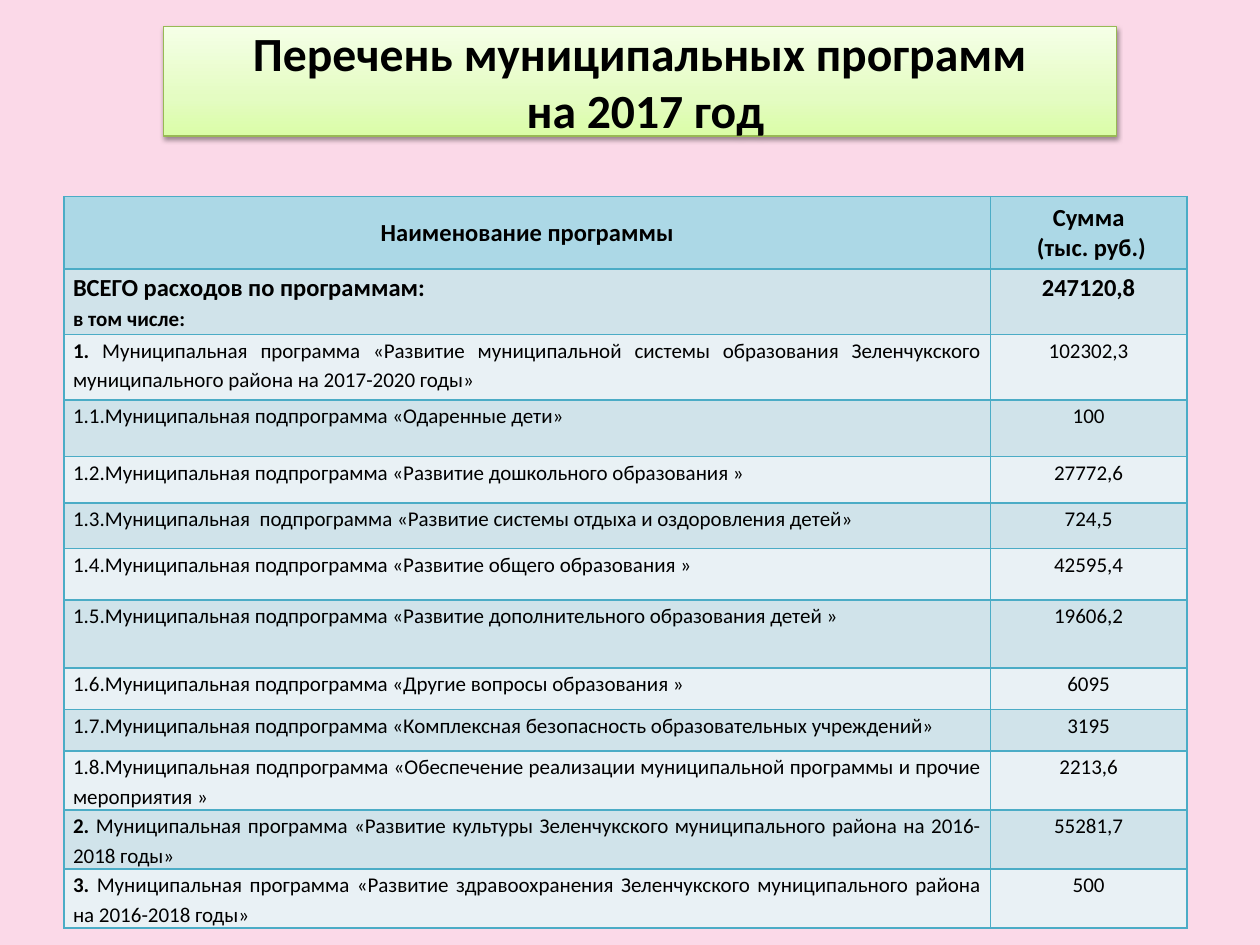
from lxml import etree
from pptx import Presentation
from pptx.dml.color import RGBColor
from pptx.enum.shapes import MSO_SHAPE
from pptx.enum.text import MSO_ANCHOR, PP_ALIGN
from pptx.oxml.ns import qn
from pptx.util import Inches, Pt

CENTER, JUSTIFY = PP_ALIGN.CENTER, PP_ALIGN.JUSTIFY
MIDDLE, TOP = MSO_ANCHOR.MIDDLE, MSO_ANCHOR.TOP
RECTANGLE = MSO_SHAPE.RECTANGLE

# Content: a paragraph is a list of (text, size, bold) runs
TITLE = ["Перечень муниципальных программ", " на 2017 год"]
HEADERS = [["Наименование программы"], ["Сумма", " (тыс. руб.)"]]
TOTAL = ([("ВСЕГО расходов по программам:", 14), ("в том числе:", 12)], "247120,8")
# Bold number, name, amount, row height
PROGRAMS = [
    ("1.", " Муниципальная программа «Развитие муниципальной системы образования "
     "Зеленчукского муниципального района на 2017-2020 годы»", "102302,3", 0.52),
    ("", "1.1.Муниципальная подпрограмма «Одаренные дети» ", "100", 0.45),
    ("", "1.2.Муниципальная подпрограмма «Развитие дошкольного образования »",
     "27772,6", 0.37),
    ("", "1.3.Муниципальная  подпрограмма «Развитие системы отдыха и оздоровления "
     "детей»", "724,5", 0.36),
    ("", "1.4.Муниципальная подпрограмма «Развитие общего образования »",
     "42595,4", 0.41),
    ("", "1.5.Муниципальная подпрограмма «Развитие дополнительного образования "
     "детей »", "19606,2", 0.54),
    ("", "1.6.Муниципальная подпрограмма «Другие вопросы образования »", "6095", 0.33),
    ("", "1.7.Муниципальная подпрограмма «Комплексная безопасность образовательных "
     "учреждений»", "3195", 0.33),
    ("", "1.8.Муниципальная подпрограмма «Обеспечение реализации муниципальной "
     "программы и прочие мероприятия »", "2213,6", 0.44),
    ("2. ", "Муниципальная программа «Развитие культуры Зеленчукского "
     "муниципального района на 2016-2018 годы»", "55281,7", 0.43),
    ("3. ", "Муниципальная программа «Развитие здравоохранения Зеленчукского "
     "муниципального района на 2016-2018 годы»", "500", 0.43),
]
COLUMN_WIDTHS = [7.35, 1.56]
HEADER_HEIGHT, TOTAL_HEIGHT = 0.54, 0.52
HEADER_FILL, BAND_FILLS = "ACD8E6", ["D0E3EA", "E9F1F5"]
GRID_COLOR = "4BACC6"
TITLE_GRADIENT = [(0, "DAFDA7"), (35, "E4FCC2"), (100, "F5FFE7")]


def rgb(value):
    return RGBColor.from_string(value)


def add_color(parent, value):
    return etree.SubElement(parent, qn("a:srgbClr"), val=value)


def write_text(frame, paragraphs, align=CENTER, spacing=None):
    for i, runs in enumerate(paragraphs):
        paragraph = frame.paragraphs[0] if i == 0 else frame.add_paragraph()
        paragraph.alignment = align
        if spacing:
            paragraph.line_spacing = spacing
        for text, size, bold in runs:
            run = paragraph.add_run()
            run.text = text
            run.font.name = "Calibri"
            run.font.size = Pt(size)
            run.font.bold = bold
            run.font.color.rgb = rgb("000000")


def style_cell(cell, fill, anchor=TOP, insets=(0.07, 0)):
    cell.fill.solid()
    cell.fill.fore_color.rgb = rgb(fill)
    cell.vertical_anchor = anchor
    cell.margin_left = cell.margin_right = Inches(insets[0])
    cell.margin_top = cell.margin_bottom = Inches(insets[1])
    properties = cell._tc.get_or_add_tcPr()
    for position, side in enumerate(("lnL", "lnR", "lnT", "lnB")):
        border = etree.Element(qn("a:" + side), w=str(Pt(1)))
        add_color(etree.SubElement(border, qn("a:solidFill")), GRID_COLOR)
        properties.insert(position, border)


def style_banner(banner):
    banner.shadow.inherit = False
    banner.line.color.rgb = rgb("98B955")
    banner.line.width = Pt(0.75)
    # Three-stop gradient running upwards
    gradient = etree.Element(qn("a:gradFill"), rotWithShape="1")
    stops = etree.SubElement(gradient, qn("a:gsLst"))
    for position, color in TITLE_GRADIENT:
        add_color(etree.SubElement(stops, qn("a:gs"), pos=str(position * 1000)), color)
    etree.SubElement(gradient, qn("a:lin"), ang=str(270 * 60000), scaled="0")
    properties = banner.element.spPr
    properties.find(qn("a:ln")).addprevious(gradient)
    # Soft shadow below
    shadow = etree.SubElement(properties.find(qn("a:effectLst")), qn("a:outerShdw"),
                              blurRad=str(Pt(3.1)), dist=str(Pt(1.6)),
                              dir=str(90 * 60000), rotWithShape="0")
    etree.SubElement(add_color(shadow, "000000"), qn("a:alpha"), val="38000")


def add_program_table(slide):
    heights = [HEADER_HEIGHT, TOTAL_HEIGHT] + [program[3] for program in PROGRAMS]
    table = slide.shapes.add_table(
        len(heights), len(COLUMN_WIDTHS), Inches(0.51), Inches(1.56),
        Inches(sum(COLUMN_WIDTHS)), Inches(sum(heights))).table
    table.first_row = table.horz_banding = False
    for column, width in zip(table.columns, COLUMN_WIDTHS):
        column.width = Inches(width)
    for row, height in zip(table.rows, heights):
        row.height = Inches(height)

    # Header row
    for column, (lines, side) in enumerate(zip(HEADERS, (0.1, 0.04))):
        cell = table.cell(0, column)
        style_cell(cell, HEADER_FILL, MIDDLE, (side, 0.05))
        write_text(cell.text_frame, [[(line, 14, True)] for line in lines])

    # Total row, then one row per program
    lines, total = TOTAL
    body = [([[(text, size, True)] for text, size in lines], (total, 14, True))]
    for number, name, amount, _ in PROGRAMS:
        runs = [(number, 12, True)] if number else []
        body.append(([runs + [(name, 12, False)]], (amount, 12, False)))
    for i, (name_paragraphs, amount_run) in enumerate(body):
        name_cell, amount_cell = table.cell(i + 1, 0), table.cell(i + 1, 1)
        for cell in (name_cell, amount_cell):
            style_cell(cell, BAND_FILLS[i % 2])
        write_text(name_cell.text_frame, name_paragraphs, align=JUSTIFY, spacing=1.15)
        write_text(amount_cell.text_frame, [[amount_run]], spacing=1.15)


def main():
    deck = Presentation()
    deck.slide_width, deck.slide_height = Inches(10), Inches(7.5)
    slide = deck.slides.add_slide(deck.slide_layouts[6])
    slide.background.fill.solid()
    slide.background.fill.fore_color.rgb = rgb("FBD9E8")

    add_program_table(slide)

    # Title banner
    banner = slide.shapes.add_shape(RECTANGLE, Inches(1.3), Inches(0.21),
                                    Inches(7.56), Inches(0.87))
    style_banner(banner)
    banner.text_frame.word_wrap = True
    banner.text_frame.vertical_anchor = MIDDLE
    write_text(banner.text_frame, [[(line, 27.2, True)] for line in TITLE])

    deck.save("out.pptx")


if __name__ == "__main__":
    main()
